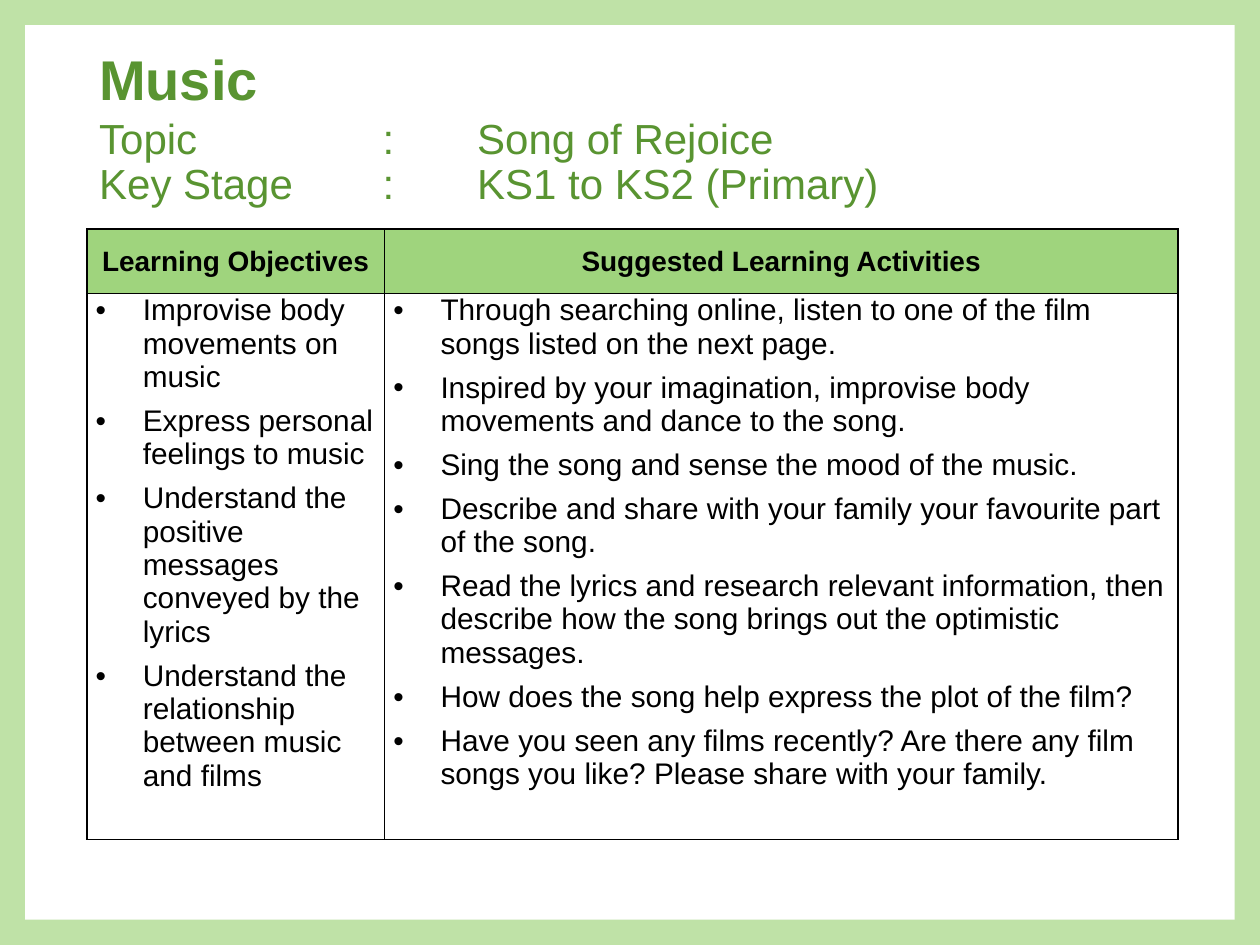
from dataclasses import dataclass

from lxml.etree import SubElement
from pptx import Presentation
from pptx.dml.color import RGBColor as RGB
from pptx.enum.shapes import MSO_SHAPE as Preset
from pptx.enum.text import MSO_ANCHOR as Anchor, PP_ALIGN as Align
from pptx.oxml.ns import qn
from pptx.util import Cm, Pt

SUBJECT = "Music"
DETAILS = "Topic\t\t:\tSong of Rejoice\vKey Stage\t:\tKS1 to KS2 (Primary)"
COLUMNS = [
    ("Learning Objectives", 6, [
        "Improvise body movements on music",
        "Express personal feelings to music",
        "Understand the positive messages conveyed by the lyrics",
        "Understand the relationship between music and films",
    ]),
    ("Suggested Learning Activities", 16, [
        "Through searching online, listen to one of the film songs listed on the next page.",
        "Inspired by your imagination, improvise body movements and dance to the song.",
        "Sing the song and sense the mood of the music.",
        "Describe and share with your family your favourite part of the song.",
        "Read the lyrics and research relevant information, then describe how the song "
        "brings out the optimistic messages.",
        "How does the song help express the plot of the film?",
        "Have you seen any films recently? Are there any film songs you like? "
        "Please share with your family.",
    ]),
]


@dataclass(frozen=True)
class Theme:
    font: str = "Arial"
    frame: str = "BFE2A7"
    page: str = "FFFFFF"
    heading: str = "599431"
    header: str = "9FD47D"
    ink: str = "000000"
    subject_size: int = 32
    details_size: int = 24
    header_size: int = 16
    body_size: int = 17


THEME = Theme()
SLIDE_W, SLIDE_H = 25.4, 19.05
BORDER = 0.51
LEFT, HEADING_W = 1.75, 21.9
TABLE_TOP, HEADER_H, BODY_H = 4.62, 1.3, 11
INSET, INDENT, TAB = 0.18, 0.95, 1.905


def style_runs(paragraph, size, color, bold=False):
    for run in paragraph.runs:
        font = run.font
        font.name, font.size, font.bold = THEME.font, Pt(size), bold
        font.color.rgb = RGB.from_string(color)


def add_heading(slide, text, top, height, size, bold=False):
    frame = slide.shapes.add_textbox(Cm(LEFT), Cm(top), Cm(HEADING_W), Cm(height)).text_frame
    frame.word_wrap = True
    frame.vertical_anchor = Anchor.MIDDLE
    heading = frame.paragraphs[0]
    heading.text = text
    heading.line_spacing = 0.9
    heading._p.get_or_add_pPr().set("defTabSz", str(Cm(TAB)))
    style_runs(heading, size, THEME.heading, bold)


def add_bullet(paragraph):
    props = paragraph._p.get_or_add_pPr()
    props.set("marL", str(Cm(INDENT)))
    props.set("indent", str(-Cm(INDENT)))
    SubElement(props, qn("a:buFont"), typeface=THEME.font)
    SubElement(props, qn("a:buChar"), char="•")


def format_cell(cell, fill=None):
    """Set insets, one-point borders and the fill, or no fill."""
    cell.margin_left = cell.margin_right = Cm(INSET)
    cell.margin_top = cell.margin_bottom = 0
    props = cell._tc.get_or_add_tcPr()
    for side in ("lnL", "lnR", "lnT", "lnB"):
        line = SubElement(props, qn(f"a:{side}"), w=str(Pt(1)))
        SubElement(SubElement(line, qn("a:solidFill")), qn("a:srgbClr"), val=THEME.ink)
    if fill:
        cell.fill.solid()
        cell.fill.fore_color.rgb = RGB.from_string(fill)
    else:
        cell.fill.background()


def add_plan(slide):
    total_w = sum(width for _, width, _ in COLUMNS)
    table = slide.shapes.add_table(2, len(COLUMNS), Cm(LEFT), Cm(TABLE_TOP),
                                   Cm(total_w), Cm(HEADER_H + BODY_H)).table
    table.first_row = table.horz_banding = False
    table.rows[0].height, table.rows[1].height = Cm(HEADER_H), Cm(BODY_H)
    for index, (title, width, items) in enumerate(COLUMNS):
        table.columns[index].width = Cm(width)
        header, body = table.cell(0, index), table.cell(1, index)

        format_cell(header, THEME.header)
        header.vertical_anchor = Anchor.MIDDLE
        header.text_frame.text = title
        label = header.text_frame.paragraphs[0]
        label.alignment = Align.CENTER
        style_runs(label, THEME.header_size, THEME.ink, bold=True)

        format_cell(body)
        body.text_frame.text = "\n".join(items)
        for item in body.text_frame.paragraphs:
            item.space_after = Pt(6)
            add_bullet(item)
            style_runs(item, THEME.body_size, THEME.ink)


def main():
    deck = Presentation()
    deck.slide_width, deck.slide_height = Cm(SLIDE_W), Cm(SLIDE_H)
    slide = deck.slides.add_slide(deck.slide_layouts[6])
    slide.background.fill.solid()
    slide.background.fill.fore_color.rgb = RGB.from_string(THEME.frame)

    page = slide.shapes.add_shape(Preset.RECTANGLE, Cm(BORDER), Cm(BORDER),
                                  Cm(SLIDE_W - 2 * BORDER), Cm(SLIDE_H - 2 * BORDER))
    page.shadow.inherit = False
    page.fill.solid()
    page.fill.fore_color.rgb = RGB.from_string(THEME.page)
    page.line.fill.background()

    add_heading(slide, DETAILS, 2.08, 2.44, THEME.details_size)
    add_plan(slide)
    add_heading(slide, SUBJECT, 0.89, 1.55, THEME.subject_size, bold=True)
    deck.save("out.pptx")


if __name__ == "__main__":
    main()
